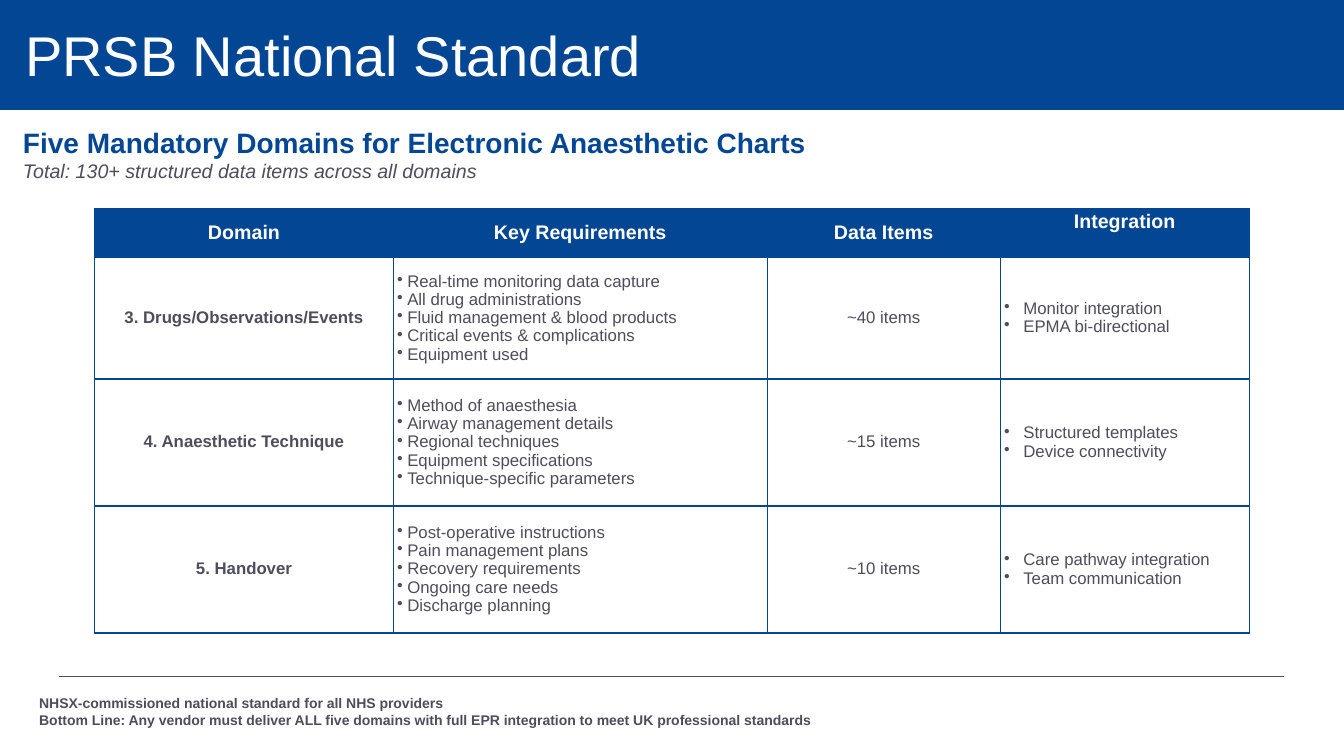
from lxml import etree
from pptx import Presentation
from pptx.dml.color import RGBColor
from pptx.enum.shapes import MSO_CONNECTOR, MSO_SHAPE
from pptx.enum.text import MSO_ANCHOR, PP_ALIGN
from pptx.oxml.ns import qn
from pptx.util import Inches, Pt

COLORS = {"blue": "034694", "grey": "4D4D5B", "white": "FFFFFF"}


def write(frame, lines, size, color, bold=False, align=PP_ALIGN.LEFT, indent=0, spacing=None):
    """Fill a text frame with one paragraph per line, bulleted when indent is set."""
    frame.word_wrap = True
    for index, line in enumerate(lines):
        para = frame.paragraphs[0] if index == 0 else frame.add_paragraph()
        para.text = line
        para.alignment = align
        para.line_spacing = spacing
        if indent:
            properties = para._p.get_or_add_pPr()
            properties.set("marL", str(Inches(indent)))
            properties.set("indent", str(-Inches(indent)))
            etree.SubElement(properties, qn("a:buChar"), char="•")
        para.font.name = "Arial"
        para.font.size = Pt(size)
        para.font.bold = bold
        para.font.color.rgb = RGBColor.from_string(COLORS[color])


def add_borders(cell, bottom_width):
    """Draw the four blue edges of a table cell."""
    properties = cell._tc.get_or_add_tcPr()
    for side, width in (("L", 1), ("R", 1), ("T", 1), ("B", bottom_width)):
        edge = etree.SubElement(properties, qn(f"a:ln{side}"), w=str(Pt(width)))
        fill = etree.SubElement(edge, qn("a:solidFill"))
        etree.SubElement(fill, qn("a:srgbClr"), val=COLORS["blue"])


deck = Presentation()
deck.slide_width, deck.slide_height = Inches(13.33), Inches(7.5)
page = deck.slides.add_slide(deck.slide_layouts[6])

# Title banner
banner = page.shapes.add_shape(MSO_SHAPE.RECTANGLE, 0, 0, deck.slide_width, Inches(1.08))
banner.shadow.inherit = False
banner.fill.solid()
banner.fill.fore_color.rgb = RGBColor.from_string(COLORS["blue"])
banner.line.color.rgb = RGBColor.from_string(COLORS["blue"])
banner.line.width = Pt(1)
banner.text_frame.margin_left = Inches(0.25)
banner.text_frame.vertical_anchor = MSO_ANCHOR.MIDDLE
write(banner.text_frame, ["PRSB National Standard"], 40, "white")

# Heading and subheading
heading = page.shapes.add_textbox(Inches(0.13), Inches(0.99), Inches(8.5), Inches(1.08))
heading.text_frame.vertical_anchor = MSO_ANCHOR.MIDDLE
write(heading.text_frame, ["Five Mandatory Domains for Electronic Anaesthetic Charts",
                           "Total: 130+ structured data items across all domains"], 20, "blue", bold=True)
subheading = heading.text_frame.paragraphs[1]
subheading.font.size = Pt(14)
subheading.font.bold = False
subheading.font.italic = True
subheading.font.color.rgb = RGBColor.from_string(COLORS["grey"])

# Domain table
headers = ["Domain", "Key Requirements", "Data Items", "Integration"]
domains = [
    (["3. Drugs/Observations/Events"],
     ["Real-time monitoring data capture", "All drug administrations",
      "Fluid management & blood products", "Critical events & complications", "Equipment used"],
     ["~40 items"], ["Monitor integration", "EPMA bi-directional"]),
    (["4. Anaesthetic Technique"],
     ["Method of anaesthesia", "Airway management details", "Regional techniques",
      "Equipment specifications", "Technique-specific parameters"],
     ["~15 items"], ["Structured templates", "Device connectivity"]),
    (["5. Handover"],
     ["Post-operative instructions", "Pain management plans", "Recovery requirements",
      "Ongoing care needs", "Discharge planning"],
     ["~10 items"], ["Care pathway integration", "Team communication"]),
]
column_widths = [2.96, 3.71, 2.31, 2.47]
row_heights = [0.48, 1.21, 1.26, 1.26]
column_indents = [0, 0.1, 0, 0.19]

table = page.shapes.add_table(len(row_heights), len(column_widths), Inches(0.94), Inches(2.07),
                              Inches(sum(column_widths)), Inches(sum(row_heights))).table
table.horz_banding = False
for column, width in zip(table.columns, column_widths):
    column.width = Inches(width)
for row, height in zip(table.rows, row_heights):
    row.height = Inches(height)

for row_index, contents in enumerate([[[header] for header in headers], *domains]):
    is_header = row_index == 0
    for column_index, lines in enumerate(contents):
        cell = table.cell(row_index, column_index)
        cell.margin_left = cell.margin_right = Inches(0.04)
        cell.margin_top = cell.margin_bottom = Inches(0.02)
        cell.vertical_anchor = MSO_ANCHOR.MIDDLE
        add_borders(cell, 2 if is_header else 1)
        if is_header:
            cell.fill.solid()
            cell.fill.fore_color.rgb = RGBColor.from_string(COLORS["blue"])
            write(cell.text_frame, lines, 14, "white", bold=True, align=PP_ALIGN.CENTER)
        else:
            cell.fill.background()
            indent = column_indents[column_index]
            write(cell.text_frame, lines, 12, "grey", bold=column_index == 0,
                  align=PP_ALIGN.LEFT if indent else PP_ALIGN.CENTER, indent=indent, spacing=0.97)
table.cell(0, 3).vertical_anchor = MSO_ANCHOR.TOP

# Footer rule and note
rule = page.shapes.add_connector(MSO_CONNECTOR.STRAIGHT, Inches(12.74), Inches(6.71), Inches(0.59), Inches(6.71))
rule.line.color.rgb = RGBColor.from_string(COLORS["grey"])
rule.line.width = Pt(0.25)
etree.SubElement(rule._element.spPr, qn("a:effectLst"))

note = page.shapes.add_textbox(Inches(0.29), Inches(6.84), Inches(12.75), Inches(0.44))
write(note.text_frame, ["NHSX-commissioned national standard for all NHS providers",
                        "Bottom Line: Any vendor must deliver ALL five domains with full EPR integration "
                        "to meet UK professional standards"], 10, "grey", bold=True)

deck.save("out.pptx")
